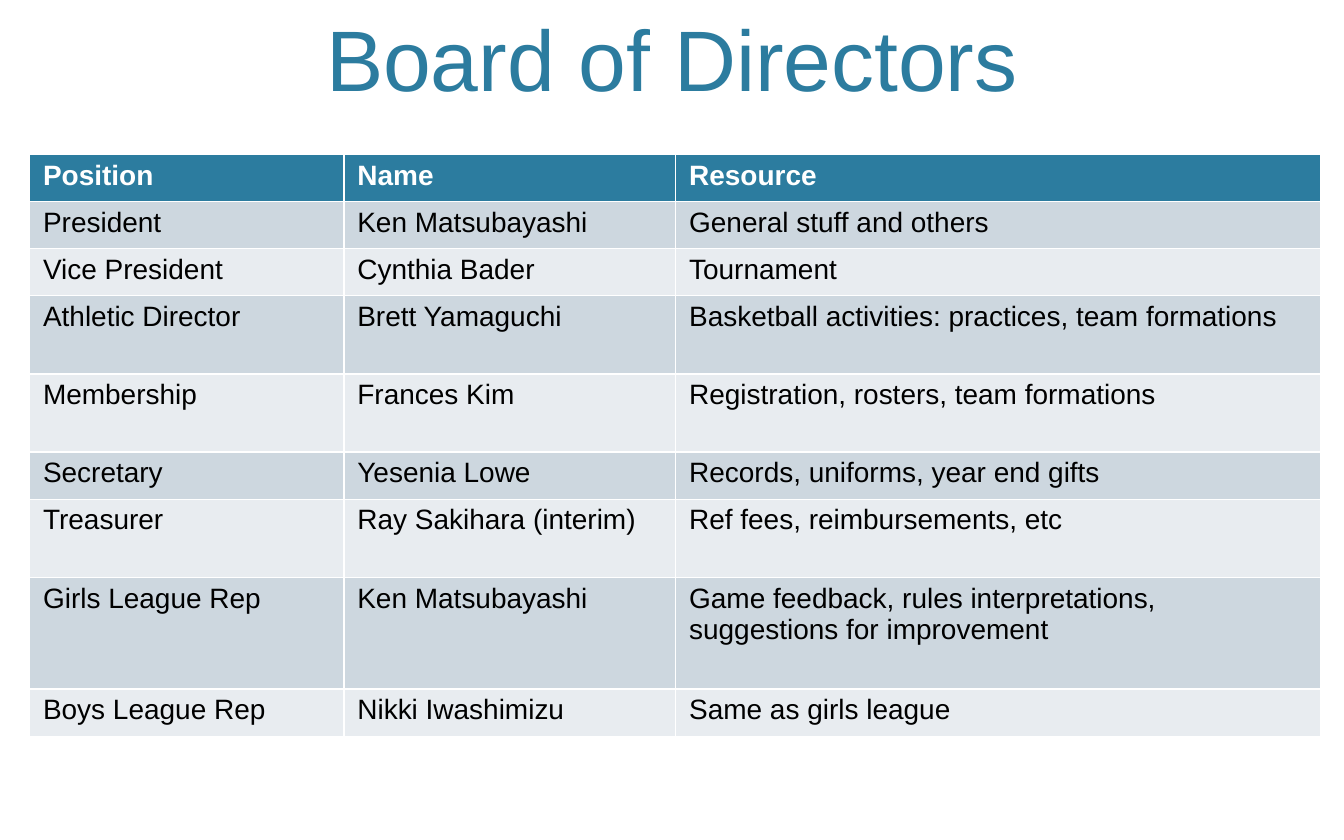
from pptx import Presentation
from pptx.dml.color import RGBColor
from pptx.enum.text import MSO_ANCHOR, MSO_AUTO_SIZE, PP_ALIGN
from pptx.util import Cm, Pt

# Content
TITLE = "Board of Directors"
HEADER = ("Position", "Name", "Resource")
MEMBERS = [
    ("President", "Ken Matsubayashi", "General stuff and others"),
    ("Vice President", "Cynthia Bader", "Tournament"),
    ("Athletic Director", "Brett Yamaguchi",
     "Basketball activities: practices, team formations"),
    ("Membership", "Frances Kim", "Registration, rosters, team formations"),
    ("Secretary", "Yesenia Lowe", "Records, uniforms, year end gifts"),
    ("Treasurer", "Ray Sakihara (interim)", "Ref fees, reimbursements, etc"),
    ("Girls League Rep", "Ken Matsubayashi",
     "Game feedback, rules interpretations, suggestions for improvement"),
    ("Boys League Rep", "Nikki Iwashimizu", "Same as girls league"),
]

# Style and sizes in cm
FONT = "Arial"
TEAL = RGBColor(0x2C, 0x7C, 0x9F)
WHITE = RGBColor(0xFF, 0xFF, 0xFF)
BLACK = RGBColor(0x00, 0x00, 0x00)
BANDS = (RGBColor(0xCD, 0xD7, 0xDF), RGBColor(0xE8, 0xEC, 0xF0))
COL_WIDTHS = (5.94, 6.27, 12.19)
LOW, MID, TALL = 0.89, 1.48, 2.11
ROW_HEIGHTS = (LOW, LOW, LOW, MID, MID, LOW, MID, TALL, LOW)


def set_font(p, size, color, bold=False):
    p.font.name, p.font.size, p.font.bold = FONT, Pt(size), bold
    p.font.color.rgb = color


prs = Presentation()
prs.slide_width, prs.slide_height = Cm(25.4), Cm(15.88)
s = prs.slides.add_slide(prs.slide_layouts[5])

# Title
title = s.shapes.title
title.left, title.top, title.width, title.height = Cm(1.52), Cm(0.25), Cm(22.35), Cm(1.93)
tf = title.text_frame
tf.text = TITLE
tf.vertical_anchor = MSO_ANCHOR.BOTTOM
tf.auto_size = MSO_AUTO_SIZE.NONE
tf.paragraphs[0].alignment = PP_ALIGN.CENTER
set_font(tf.paragraphs[0], 46, TEAL)

# Table: the default style draws the white cell borders
rows = [HEADER] + MEMBERS
table = s.shapes.add_table(len(rows), len(HEADER), Cm(0.56), Cm(2.92),
                           Cm(sum(COL_WIDTHS)), Cm(sum(ROW_HEIGHTS))).table
for column, width in zip(table.columns, COL_WIDTHS):
    column.width = Cm(width)
for i, (row, height, texts) in enumerate(zip(table.rows, ROW_HEIGHTS, rows)):
    row.height = Cm(height)
    is_header = i == 0
    for cell, text in zip(row.cells, texts):
        cell.text = text
        cell.margin_top = cell.margin_bottom = Cm(0.1)
        cell.fill.solid()
        cell.fill.fore_color.rgb = TEAL if is_header else BANDS[(i - 1) % 2]
        set_font(cell.text_frame.paragraphs[0], 15,
                 WHITE if is_header else BLACK, is_header)

prs.save("out.pptx")
